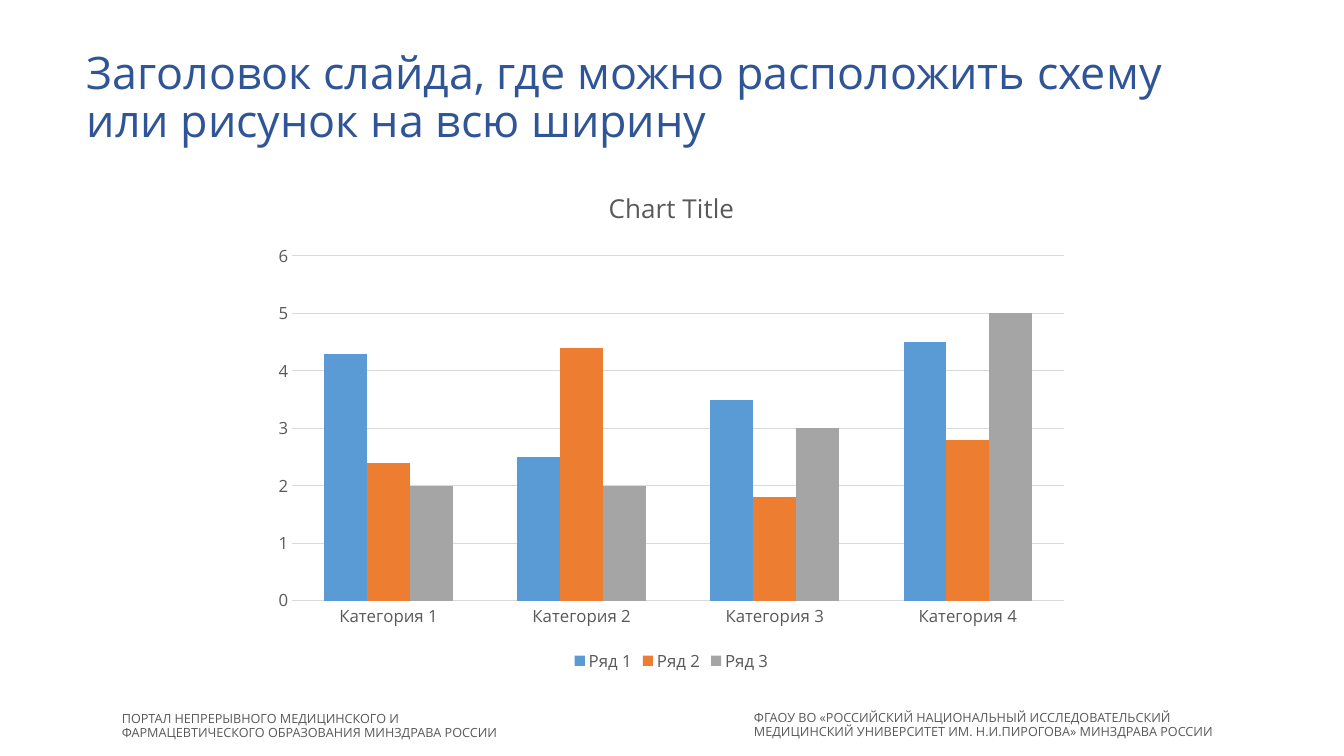
"""Build a slide with a full-width title, a clustered column chart and two footers."""
from dataclasses import dataclass

from pptx import Presentation
from pptx.chart.axis import CategoryAxis, ValueAxis
from pptx.chart.chart import Chart
from pptx.chart.data import CategoryChartData
from pptx.dml.color import RGBColor
from pptx.enum.chart import XL_CHART_TYPE, XL_LEGEND_POSITION, XL_TICK_MARK
from pptx.enum.text import MSO_ANCHOR, MSO_AUTO_SIZE, PP_ALIGN
from pptx.slide import Slide
from pptx.text.text import Font, TextFrame
from pptx.util import Inches, Length, Pt


@dataclass(frozen=True)
class Theme:
    face: str = "Open Sans"
    title: str = "2F5597"
    text: str = "595959"
    grid: str = "D9D9D9"
    head: float = 32
    chart: float = 18.6
    label: float = 12
    foot: float = 9
    lines: float = 0.9


@dataclass(frozen=True)
class Box:
    left: float
    top: float
    width: float
    height: float

    def frame(self) -> tuple[Length, ...]:
        return tuple(Inches(n) for n in (self.left, self.top, self.width, self.height))


@dataclass(frozen=True)
class Footer:
    box: Box
    text: str


@dataclass(frozen=True)
class Series:
    name: str
    values: tuple[float, ...]
    color: str


THEME = Theme()
TITLE = "Заголовок слайда, где можно расположить схему или рисунок на всю ширину"
FOOTERS = (
    Footer(Box(7.38, 7.01, 5.2, 0.4),
           "ФГАОУ ВО «РОССИЙСКИЙ НАЦИОНАЛЬНЫЙ ИССЛЕДОВАТЕЛЬСКИЙ "
           "МЕДИЦИНСКИЙ УНИВЕРСИТЕТ ИМ. Н.И.ПИРОГОВА» МИНЗДРАВА РОССИИ"),
    Footer(Box(1.11, 7.02, 4.32, 0.4),
           "ПОРТАЛ НЕПРЕРЫВНОГО МЕДИЦИНСКОГО И "
           "ФАРМАЦЕВТИЧЕСКОГО ОБРАЗОВАНИЯ МИНЗДРАВА РОССИИ"),
)
SERIES = (
    Series("Ряд 1", (4.3, 2.5, 3.5, 4.5), "5B9BD5"),
    Series("Ряд 2", (2.4, 4.4, 1.8, 2.8), "ED7D31"),
    Series("Ряд 3", (2, 2, 3, 5), "A5A5A5"),
)


def style(font: Font, size: float, color: str) -> None:
    font.name = THEME.face
    font.size = Pt(size)
    font.bold = False
    font.color.rgb = RGBColor.from_string(color)


def write(frame: TextFrame, text: str, size: float, color: str) -> None:
    para = frame.paragraphs[0]
    run = para.add_run()
    run.text = text
    style(run.font, size, color)


def add_title(slide: Slide, box: Box) -> None:
    title = slide.shapes.title
    title.left, title.top, title.width, title.height = box.frame()
    frame = title.text_frame
    frame.word_wrap = True
    frame.auto_size = MSO_AUTO_SIZE.NONE
    frame.vertical_anchor = MSO_ANCHOR.MIDDLE
    write(frame, TITLE, THEME.head, THEME.title)
    frame.paragraphs[0].alignment = PP_ALIGN.LEFT
    frame.paragraphs[0].line_spacing = THEME.lines


def add_footer(slide: Slide, footer: Footer) -> None:
    frame = slide.shapes.add_textbox(*footer.box.frame()).text_frame
    frame.word_wrap = True
    frame.auto_size = MSO_AUTO_SIZE.SHAPE_TO_FIT_TEXT
    write(frame, footer.text, THEME.foot, THEME.text)
    frame.paragraphs[0].line_spacing = THEME.lines


def format_axis(axis: CategoryAxis | ValueAxis) -> None:
    axis.major_tick_mark = axis.minor_tick_mark = XL_TICK_MARK.NONE
    axis.format.line.fill.background()
    style(axis.tick_labels.font, THEME.label, THEME.text)


def format_chart(chart: Chart) -> None:
    style(chart.font, THEME.label, THEME.text)
    chart.has_title = True
    write(chart.chart_title.text_frame, "Chart Title", THEME.chart, THEME.text)
    chart.chart_title.include_in_layout = False
    chart.has_legend = True
    chart.legend.position = XL_LEGEND_POSITION.BOTTOM
    chart.legend.include_in_layout = False
    style(chart.legend.font, THEME.label, THEME.text)
    for axis in (chart.category_axis, chart.value_axis):
        format_axis(axis)
    scale = chart.value_axis
    scale.minimum_scale, scale.maximum_scale, scale.major_unit = 0, 6, 1
    scale.tick_labels.number_format = "General"
    scale.tick_labels.number_format_is_linked = False
    grid = scale.major_gridlines.format.line
    grid.width = Pt(0.75)
    grid.color.rgb = RGBColor.from_string(THEME.grid)


def add_chart(slide: Slide, box: Box) -> None:
    data = CategoryChartData()
    data.categories = [f"Категория {n}" for n in range(1, 5)]
    for item in SERIES:
        data.add_series(item.name, item.values)
    kind = XL_CHART_TYPE.COLUMN_CLUSTERED
    chart = slide.shapes.add_chart(kind, *box.frame(), data).chart
    format_chart(chart)
    plot = chart.plots[0]
    plot.gap_width = 150
    plot.overlap = 0
    plot.vary_by_categories = False
    for bars, item in zip(plot.series, SERIES):
        bars.format.fill.solid()
        bars.format.fill.fore_color.rgb = RGBColor.from_string(item.color)


def main() -> None:
    deck = Presentation()
    deck.slide_width, deck.slide_height = Inches(13.33), Inches(7.5)
    slide = deck.slides.add_slide(deck.slide_layouts.get_by_name("Title Only"))
    for footer in FOOTERS:
        add_footer(slide, footer)
    add_title(slide, Box(0.76, 0.3, 11.81, 1.36))
    add_chart(slide, Box(2.6, 1.66, 8.12, 5.05))
    deck.save("out.pptx")


if __name__ == "__main__":
    main()
